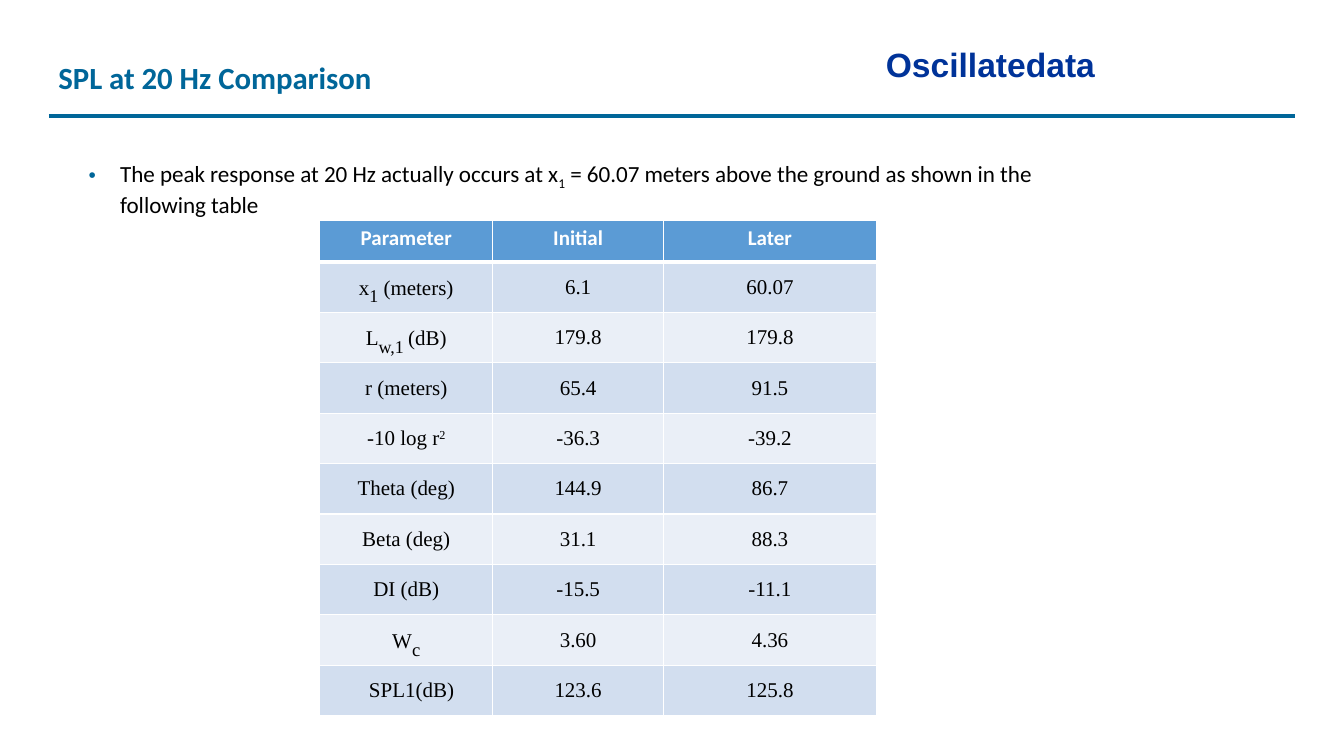
from lxml import etree
from pptx import Presentation
from pptx.dml.color import RGBColor
from pptx.enum.shapes import MSO_CONNECTOR
from pptx.enum.text import MSO_ANCHOR, MSO_AUTO_SIZE, PP_ALIGN
from pptx.oxml.ns import qn
from pptx.util import Pt

LINE = MSO_CONNECTOR.STRAIGHT
MIDDLE, TOP = MSO_ANCHOR.MIDDLE, MSO_ANCHOR.TOP
CENTER, LEFT = PP_ALIGN.CENTER, PP_ALIGN.LEFT
GROW = MSO_AUTO_SIZE.SHAPE_TO_FIT_TEXT

TEAL, NAVY, WHITE, BLACK = "006699", "003399", "FFFFFF", "000000"
HEAD, BANDS = "5B9BD5", ("D2DEEF", "EAEFF7")
SERIF = "Times New Roman"

# A label is a string, or runs of (text, size, baseline shift in percent)
HEADS = ["Parameter", "Initial", "Later"]
ROWS = [
    ([("x", 15, 0), ("1", 22, -25), (" (meters)", 15, 0)], "6.1", "60.07"),
    ([("L", 15, 0), ("w,1 ", 22, -25), ("(dB)", 15, 0)], "179.8", "179.8"),
    ("r (meters)", "65.4", "91.5"),
    ([("-10 log r", 15, 0), ("2", 15, 30)], "-36.3", "-39.2"),
    ("Theta (deg)", "144.9", "86.7"),
    ("Beta (deg)", "31.1", "88.3"),
    ("DI (dB)", "-15.5", "-11.1"),
    ([("W", 15, 0), ("c", 23, -25)], "3.60", "4.36"),
    ("SPL1(dB)", "123.6", "125.8"),
]


def color(code):
    return RGBColor.from_string(code)


def write(frame, text, size=15, font="Calibri", hue=BLACK, bold=False, align=LEFT):
    """Fill the first paragraph of a frame and return it."""
    par = frame.paragraphs[0]
    par.alignment = align
    runs = [(text, size, 0)] if isinstance(text, str) else text
    for words, points, shift in runs:
        run = par.add_run()
        run.text = words
        run.font.size = Pt(points)
        run.font.name = font
        run.font.bold = bold
        run.font.color.rgb = color(hue)
        if shift:
            run.font._element.set("baseline", str(shift * 1000))
    return par


def add_text(slide, x, y, w, h, text, wrap=True, **style):
    box = slide.shapes.add_textbox(Pt(x), Pt(y), Pt(w), Pt(h))
    frame = box.text_frame
    frame.word_wrap = wrap
    frame.auto_size = GROW
    return write(frame, text, **style)


def add_bullet(par, indent, hue):
    props = par._p.get_or_add_pPr()
    props.set("marL", str(Pt(indent)))
    props.set("indent", str(-Pt(indent)))
    tint = etree.SubElement(props, qn("a:buClr"))
    etree.SubElement(tint, qn("a:srgbClr"), val=hue)
    etree.SubElement(props, qn("a:buSzPct"), val="90000")
    etree.SubElement(props, qn("a:buFont"), typeface="Arial")
    etree.SubElement(props, qn("a:buChar"), char="•")


def add_rule(slide, x1, x2, y):
    rule = slide.shapes.add_connector(LINE, Pt(x1), Pt(y), Pt(x2), Pt(y))
    rule.line.color.rgb = color(TEAL)
    rule.line.width = Pt(2.5)
    etree.SubElement(rule._element.spPr, qn("a:effectLst"))


def set_edges(cell, **widths):
    """Draw white borders; the schema wants them ahead of the fill."""
    props = cell._tc.get_or_add_tcPr()
    for spot, side in enumerate("LRTB"):
        edge = etree.Element(qn("a:ln" + side), w=str(Pt(widths.get(side, 1))))
        fill = etree.SubElement(edge, qn("a:solidFill"))
        etree.SubElement(fill, qn("a:srgbClr"), val=WHITE)
        props.insert(spot, edge)


def set_cell(cell, text, fill, pads, anchor, edges, **style):
    cell.fill.solid()
    cell.fill.fore_color.rgb = color(fill)
    cell.margin_left, cell.margin_right = Pt(pads[0]), Pt(pads[0])
    cell.margin_top, cell.margin_bottom = Pt(pads[1]), Pt(pads[1])
    cell.vertical_anchor = anchor
    set_edges(cell, **edges)
    write(cell.text_frame, text, align=CENTER, **style)


def add_grid(slide, x, y, widths, top, step):
    count = len(ROWS)
    grid = slide.shapes.add_table(
        count + 1, len(widths), Pt(x), Pt(y), Pt(sum(widths)), Pt(top + step * count)
    ).table
    for col, width in zip(grid.columns, widths):
        col.width = Pt(width)
    for num, row in enumerate(grid.rows):
        row.height = Pt(step if num else top)

    # Header row
    for col, text in enumerate(HEADS):
        set_cell(grid.cell(0, col), text, HEAD, (7.2, 3.6), TOP, {"B": 3},
                 hue=WHITE, bold=True)

    # Banded body rows
    for num, row in enumerate(ROWS, 1):
        edges = {"T": 3} if num == 1 else {}
        for col, text in enumerate(row):
            set_cell(grid.cell(num, col), text, BANDS[(num - 1) % 2], (5, 0),
                     MIDDLE, edges, font=SERIF)

    # The last label sits slightly to the right
    grid.cell(count, 0).margin_left = Pt(12.5)


def main():
    deck = Presentation()
    deck.slide_width, deck.slide_height = Pt(960), Pt(540)
    slide = deck.slides.add_slide(deck.slide_layouts[6])

    # Heading band
    add_text(slide, 625.7, 28.1, 167.8, 36, "Oscillatedata", wrap=False,
             size=24, font="Arial", hue=NAVY, bold=True)
    add_rule(slide, 34.9, 925.2, 82.8)
    add_text(slide, 34.6, 38.2, 507.6, 33.8, "SPL at 20 Hz Comparison",
             size=22, hue=TEAL, bold=True)

    # Finding
    finding = [
        ("The peak response at 20 Hz actually occurs at x", 16.5, 0),
        ("1", 16.5, -25),
        (" = 60.07 meters above the ground as shown in the following table", 16.5, 0),
    ]
    par = add_text(slide, 56.2, 110.2, 707.8, 47.5, finding)
    add_bullet(par, 22.5, TEAL)

    # Comparison table
    add_grid(slide, 228.4, 157.7, [123.6, 122, 152], 29.5, 36)

    deck.save("out.pptx")


if __name__ == "__main__":
    main()
